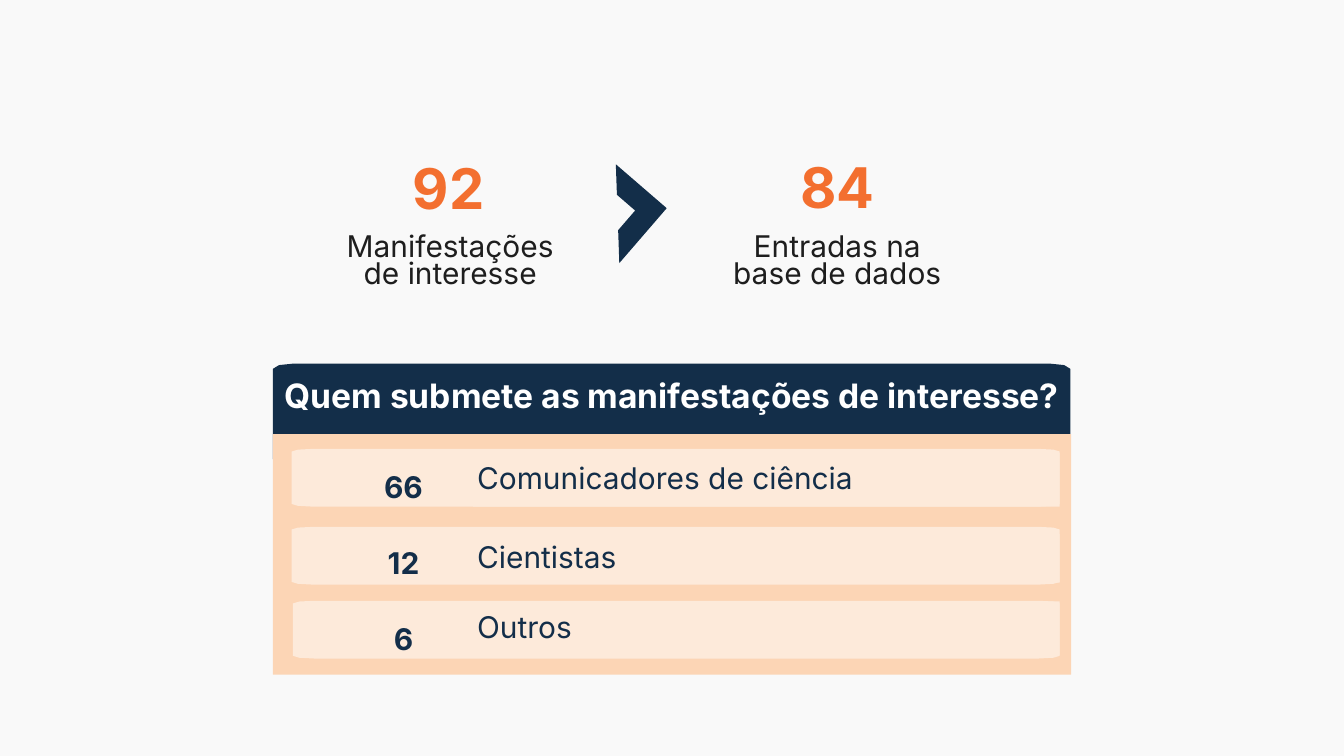
from dataclasses import dataclass
from math import cos, pi, sin

from pptx import Presentation
from pptx.dml.color import RGBColor
from pptx.enum.shapes import MSO_SHAPE
from pptx.enum.text import MSO_ANCHOR, MSO_AUTO_SIZE, PP_ALIGN
from pptx.util import Inches, Pt


@dataclass(frozen=True)
class Theme:
    font: str = "Inter"
    background: str = "F9F9F9"
    navy: str = "132E49"
    orange: str = "F36F2F"
    ink: str = "1E1E1E"
    white: str = "FFFFFF"
    panel: str = "FCD5B5"
    row: str = "FDEADA"
    figure_size: int = 60
    heading_size: int = 36
    body_size: int = 32
    tall_line: float = 67.2
    row_line: float = 33.6
    tight_line: float = 29.4


THEME = Theme()

# figure, caption, figure box (left, top, width), caption left
TOTALS = [
    ("92", "Manifestações de interesse", (5.34, 2.35, 2.67), 4.99),
    ("84", "Entradas na base de dados", (11.56, 2.33, 1.81), 10.75),
]

# count, label, bar (left, top), label box (top, height), count top
SUBMITTERS = [
    ("66", "Comunicadores de ciência", (4.34, 6.68), (6.74, 0.8), 6.58),
    ("12", "Cientistas", (4.34, 7.84), (7.95, 0.72), 7.7),
    ("6", "Outros", (4.36, 8.94), (8.95, 0.8), 8.84),
]
ROW_RIGHT = 15.77


def paint(shape, color):
    shape.shadow.inherit = False
    shape.fill.solid()
    shape.fill.fore_color.rgb = RGBColor.from_string(color)
    shape.line.fill.background()


def write(shape, text, size, color, line, bold=False, align=PP_ALIGN.CENTER, inset=0):
    frame = shape.text_frame
    frame.word_wrap = True
    frame.margin_left = frame.margin_right = Inches(inset)
    frame.margin_top = frame.margin_bottom = Inches(inset)
    para = frame.paragraphs[0]
    para.text = text
    para.alignment = align
    para.line_spacing = Pt(line)
    para.font.name = THEME.font
    para.font.size = Pt(size)
    para.font.bold = bold
    para.font.color.rgb = RGBColor.from_string(color)


def add_text(page, left, top, width, height, text, size, color, line, bold=False):
    box = page.shapes.add_textbox(*map(Inches, (left, top, width, height)))
    write(box, text, size, color, line, bold)
    box.text_frame.auto_size = MSO_AUTO_SIZE.SHAPE_TO_FIT_TEXT


def add_block(page, kind, left, top, width, height, color):
    block = page.shapes.add_shape(kind, *map(Inches, (left, top, width, height)))
    paint(block, color)
    return block


def add_soft_panel(page, left, top, width, height, radius_y, color):
    """Draw a panel whose corners are flat quarter ellipses, three points each."""
    radius_x, steps = 0.32, 2
    right, bottom = left + width, top + height
    centers = [
        (right - radius_x, bottom - radius_y),
        (left + radius_x, bottom - radius_y),
        (left + radius_x, top + radius_y),
        (right - radius_x, top + radius_y),
    ]
    points = []
    for corner, (center_x, center_y) in enumerate(centers):
        for step in range(steps + 1):
            angle = (corner + step / steps) * pi / 2
            points.append((Inches(center_x + radius_x * cos(angle)),
                           Inches(center_y + radius_y * sin(angle))))
    builder = page.shapes.build_freeform(*points[0])
    builder.add_line_segments(points[1:], close=True)
    paint(builder.convert_to_shape(), color)


def add_total(page, figure, caption, figure_box, caption_left):
    add_text(page, *figure_box, 0.94, figure, THEME.figure_size, THEME.orange,
             THEME.tall_line, bold=True)
    add_text(page, caption_left, 3.51, 3.42, 0.82, caption, THEME.body_size,
             THEME.ink, THEME.tight_line)


def add_submitter_row(page, label, bar, label_box):
    left, top = bar
    add_soft_panel(page, left, top, ROW_RIGHT - left, 0.86, 0.04, THEME.row)
    label_left, (label_top, label_height) = 7.04, label_box
    box = add_block(page, MSO_SHAPE.RECTANGLE, label_left, label_top,
                    ROW_RIGHT - label_left, label_height, THEME.row)
    write(box, label, THEME.body_size, THEME.navy, THEME.row_line,
          align=PP_ALIGN.LEFT, inset=0.06)
    box.text_frame.vertical_anchor = MSO_ANCHOR.MIDDLE


def main():
    deck = Presentation()
    deck.slide_width, deck.slide_height = Inches(20), Inches(11.25)
    page = deck.slides.add_slide(deck.slide_layouts[6])
    page.background.fill.solid()
    page.background.fill.fore_color.rgb = RGBColor.from_string(THEME.background)

    for total in TOTALS:
        add_total(page, *total)
    chevron = add_block(page, MSO_SHAPE.HALF_FRAME, 8.65, 2.68, 1.08, 1, THEME.navy)
    chevron.rotation = 130.8

    add_soft_panel(page, 4.06, 5.41, 11.87, 1.5, 0.08, THEME.navy)
    add_text(page, 1.84, 5.77, 16.32, 0.43,
             "Quem submete as manifestações de interesse?",
             THEME.heading_size, THEME.white, THEME.tight_line, bold=True)
    add_block(page, MSO_SHAPE.RECTANGLE, 4.06, 6.46, 11.88, 3.58, THEME.panel)
    for _, label, bar, label_box, _ in SUBMITTERS:
        add_submitter_row(page, label, bar, label_box)
    for count, *_, count_top in SUBMITTERS:
        add_text(page, 4.97, count_top, 2.07, 0.81, count, THEME.body_size,
                 THEME.navy, THEME.tall_line, bold=True)

    deck.save("out.pptx")


if __name__ == "__main__":
    main()
